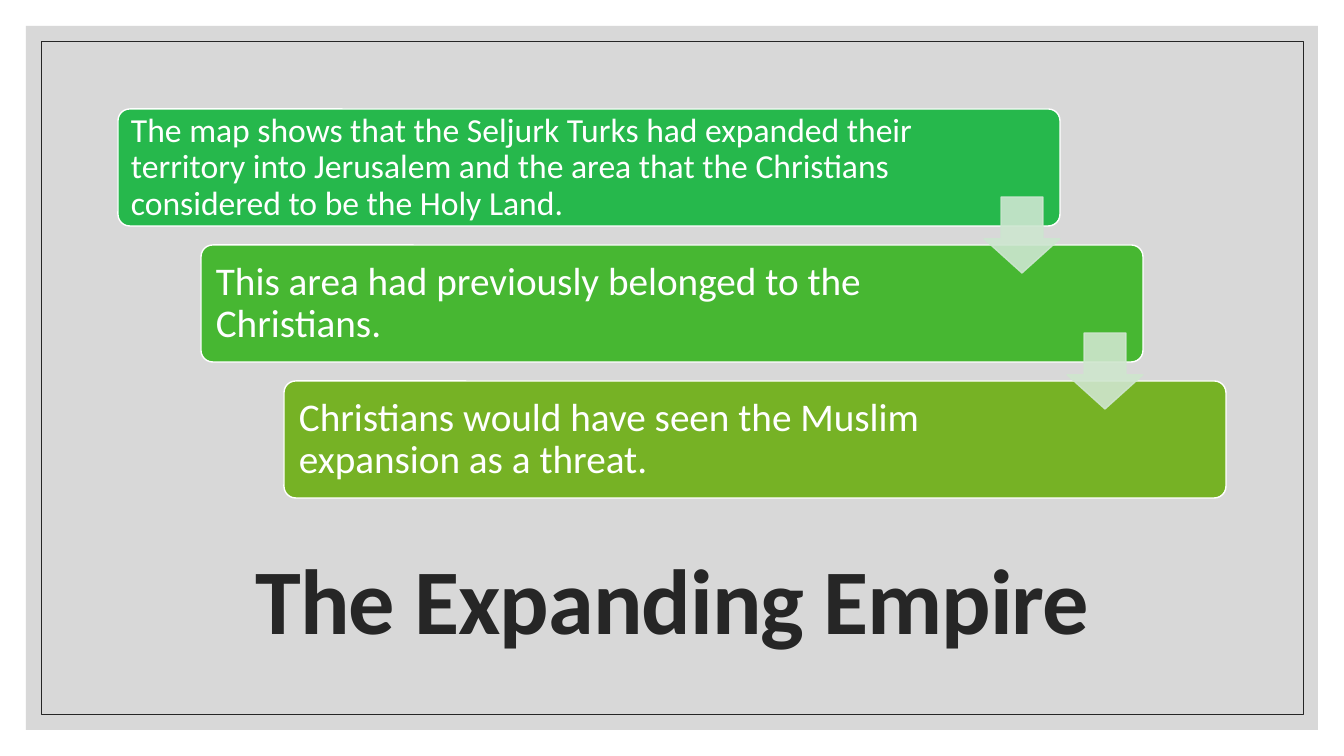
from dataclasses import dataclass

from lxml import etree
from pptx import Presentation
from pptx import util as u
from pptx.dml.color import RGBColor
from pptx.enum import shapes, text
from pptx.oxml.ns import qn

EMU_PER_PX = 914400 / 100.8


@dataclass(frozen=True)
class Theme:
    font: str = "Calibri"
    ink: str = "262626"
    white: str = "FFFFFF"
    panel: str = "BFBFBF"
    steps: tuple = ("26B84C", "47B732", "76B225")
    arrows: tuple = ("CDE6D0", "CFE6CE")
    title_size: int = 66
    long_size: int = 24
    step_size: int = 28


def px(length):
    return u.Emu(round(length * EMU_PER_PX))


def paint(fill, color, alpha=100):
    """Give a fill a solid colour with the given opacity in percent."""
    fill.solid()
    fill.fore_color.rgb = RGBColor.from_string(color)
    if alpha < 100:
        solid = fill._xPr.find(qn("a:solidFill"))
        etree.SubElement(solid[0], qn("a:alpha"), val=str(alpha * 1000))


class SlideBuilder:
    def __init__(self, slide, theme):
        self.slide = slide
        self.theme = theme

    def shape(self, kind, box, fill=None, line=None, width=1, alpha=100, adjust=()):
        shape = self.slide.shapes.add_shape(kind, *map(px, box))
        shape.shadow.inherit = False
        for index, value in enumerate(adjust):
            shape.adjustments[index] = value
        if fill:
            paint(shape.fill, fill, alpha)
        else:
            shape.fill.background()
        if line:
            paint(shape.line.fill, line, alpha)
            shape.line.width = u.Pt(width)
        else:
            shape.line.fill.background()

    def label(self, words, box, size, color, inset, align=text.PP_ALIGN.LEFT,
              bold=False, spacing=None, after=0):
        frame = self.slide.shapes.add_textbox(*map(px, box)).text_frame
        paragraph = frame.paragraphs[0]
        run = paragraph.add_run()
        run.text = words
        across, down = map(px, inset)
        formats = (
            (frame, {"word_wrap": True, "vertical_anchor": text.MSO_ANCHOR.MIDDLE,
                     "margin_left": across, "margin_right": across,
                     "margin_top": down, "margin_bottom": down}),
            (paragraph, {"alignment": align, "line_spacing": 0.9,
                         "space_after": u.Pt(after)}),
            (run.font, {"name": self.theme.font, "size": u.Pt(size), "bold": bold}),
        )
        for target, values in formats:
            for name, value in values.items():
                setattr(target, name, value)
        run.font.color.rgb = RGBColor.from_string(color)
        if spacing is not None:
            run.font._element.set("spc", str(spacing))


def main():
    theme = Theme()
    deck = Presentation()
    deck.slide_width, deck.slide_height = px(1344), px(756)
    page = SlideBuilder(deck.slides.add_slide(deck.slide_layouts[6]), theme)
    preset = shapes.MSO_SHAPE

    # Backdrop and frame
    page.shape(preset.RECTANGLE, (26, 26, 1292, 704), fill=theme.panel, alpha=60)
    page.shape(preset.RECTANGLE, (41, 41, 1262, 673), line=theme.ink, width=0.5)

    # Title
    page.label("The Expanding Empire", (118, 529, 1109, 151), theme.title_size,
               theme.ink, (10, 5), text.PP_ALIGN.CENTER, bold=True, spacing=-70)

    # Staircase of steps: words, type size, text width, inset
    steps = (
        ("The map shows that the Seljurk Turks had expanded their territory into "
         "Jerusalem and the area that the Christians considered to be the Holy Land.",
         theme.long_size, 816, 10),
        ("This area had previously belonged to the Christians.",
         theme.step_size, 776, 12),
        ("Christians would have seen the Muslim expansion as a threat.",
         theme.step_size, 776, 12),
    )
    step_right, step_down = 83, 136
    for index, (words, size, width, inset) in enumerate(steps):
        left, top = 118 + index * step_right, 109 + index * step_down
        page.shape(preset.ROUNDED_RECTANGLE, (left, top, 942, 117),
                   fill=theme.steps[index], line=theme.white, adjust=(0.1,))
        page.label(words, (left + 3, top + 4, width, 110), size, theme.white,
                   (inset, inset), after=round(size * 0.35))

    # Arrows between the steps
    for index, color in enumerate(theme.arrows):
        page.shape(preset.DOWN_ARROW,
                   (984 + index * step_right, 197 + index * step_down, 76, 76),
                   fill=color, line=color, alpha=90, adjust=(0.55, 0.45))

    deck.save("out.pptx")


if __name__ == "__main__":
    main()
